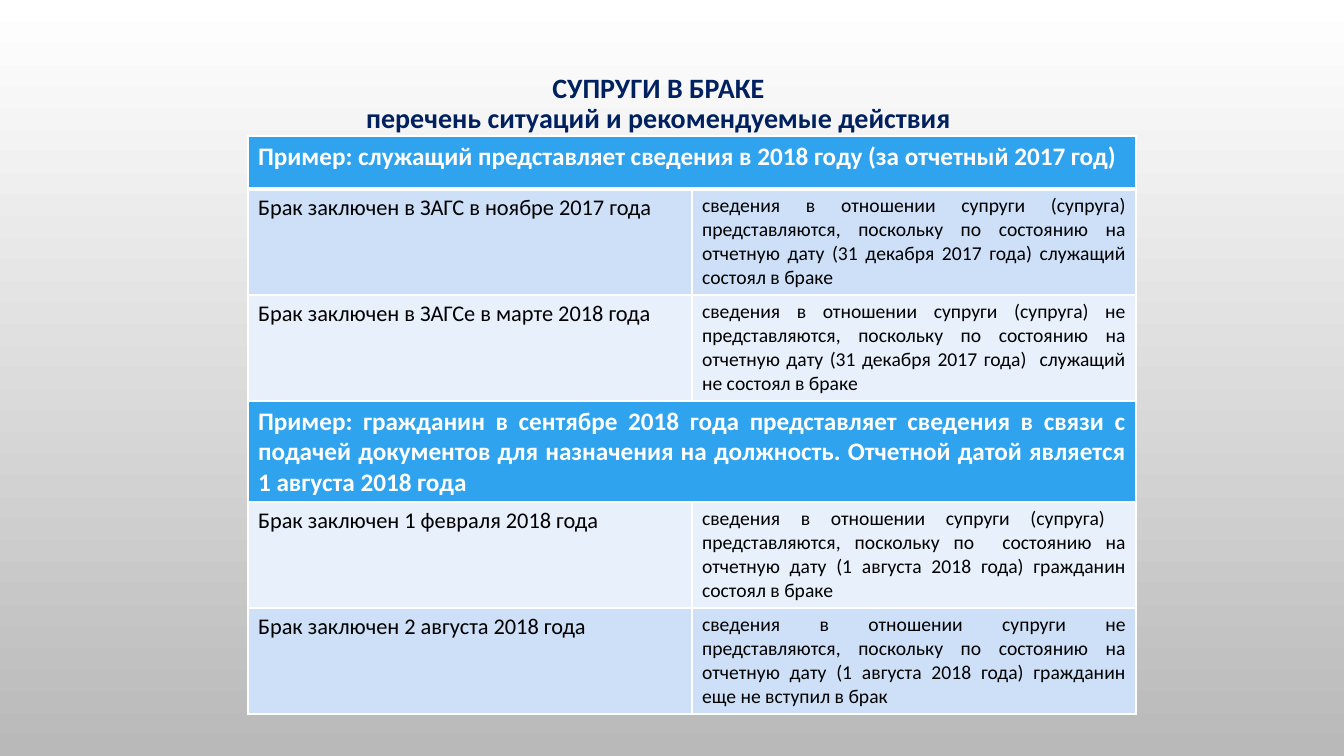
from pptx import Presentation
from pptx.dml.color import RGBColor
from pptx.enum.text import PP_ALIGN as Align
from pptx.oxml import parse_xml
from pptx.oxml.ns import nsdecls
from pptx.util import Pt

PX = 914400 / 100.8
NAVY = RGBColor(0x00, 0x20, 0x60)
WHITE = RGBColor(0xFF, 0xFF, 0xFF)
BLACK = RGBColor(0x00, 0x00, 0x00)
GREY = RGBColor(0xB9, 0xB9, 0xB9)
BLUE = RGBColor(0x2F, 0xA3, 0xEE)
LIGHT = RGBColor(0xCD, 0xE0, 0xF8)
PALE = RGBColor(0xE8, 0xF0, 0xFC)

TITLE = ["СУПРУГИ В БРАКЕ", "перечень ситуаций и рекомендуемые действия"]
TITLE_BOX = (101, 69, 1115, 66)
TABLE_LEFT, TABLE_TOP, COLUMN_WIDTH = 248, 136, 444

# Height, fill and texts; a row with a single text is a heading across both columns.
ROWS = [
    (53, BLUE, ["Пример: служащий представляет сведения в 2018 году (за отчетный 2017 год)"]),
    (106, LIGHT, [
        "Брак заключен в ЗАГС в ноябре 2017 года",
        "сведения в отношении супруги (супруга) представляются, поскольку по состоянию на "
        "отчетную дату (31 декабря 2017 года) служащий состоял в браке"]),
    (106, PALE, [
        "Брак заключен в ЗАГСе в марте 2018 года",
        "сведения в отношении супруги (супруга) не представляются, поскольку по состоянию на "
        "отчетную дату (31 декабря 2017 года)  служащий не состоял в браке"]),
    (101, BLUE, [
        "Пример: гражданин в сентябре 2018 года представляет сведения в связи с подачей "
        "документов для назначения на должность. Отчетной датой является 1 августа 2018 года"]),
    (106, PALE, [
        "Брак заключен 1 февраля 2018 года",
        "сведения в отношении супруги (супруга)  представляются, поскольку по  состоянию на "
        "отчетную дату (1 августа 2018 года) гражданин состоял в браке"]),
    (106, LIGHT, [
        "Брак заключен 2 августа 2018 года",
        "сведения в отношении супруги не представляются, поскольку по состоянию на "
        "отчетную дату (1 августа 2018 года) гражданин еще не вступил в брак"]),
]


def px(*lengths):
    return [round(n * PX) for n in lengths]


def add_text(p, text, size, color, bold, align):
    p.alignment = align
    r = p.add_run()
    r.text = text
    r.font.name = "Calibri"
    r.font.size = Pt(size)
    r.font.bold = bold
    r.font.color.rgb = color


def set_borders(cell, top, bottom):
    """Draw white borders; top and bottom are widths in points."""
    for side, width in (("L", 1), ("R", 1), ("T", top), ("B", bottom)):
        cell._tc.get_or_add_tcPr().append(parse_xml(
            f'<a:ln{side} {nsdecls("a")} w="{Pt(width)}"><a:solidFill>'
            f'<a:srgbClr val="{WHITE}"/></a:solidFill></a:ln{side}>'))


def set_background(s):
    fill = s.background.fill
    fill.gradient()
    fill.gradient_angle = 270
    for stop, position, color in zip(fill.gradient_stops, (0, 1), (WHITE, GREY)):
        stop.position = position
        stop.color.rgb = color


def add_title(s):
    tf = s.shapes.add_textbox(*px(*TITLE_BOX)).text_frame
    tf.word_wrap = True
    for i, line in enumerate(TITLE):
        p = tf.add_paragraph() if i else tf.paragraphs[0]
        p.line_spacing = 0.9
        add_text(p, line, 20, NAVY, True, Align.CENTER)


def add_situations(s):
    heights = [height for height, _, _ in ROWS]
    table = s.shapes.add_table(len(ROWS), 2, *px(
        TABLE_LEFT, TABLE_TOP, 2 * COLUMN_WIDTH, sum(heights))).table
    for column in table.columns:
        column.width = px(COLUMN_WIDTH)[0]
    for i, (height, color, texts) in enumerate(ROWS):
        table.rows[i].height = px(height)[0]
        cells = [table.cell(i, j) for j in range(2)]
        for cell in cells:
            set_borders(cell, 3 if i == 1 else 1, 3 if i == 0 else 1)
            cell.fill.solid()
            cell.fill.fore_color.rgb = color
        if len(texts) == 1:
            cells[0].merge(cells[1])
            styles = [(18, WHITE, True, Align.JUSTIFY if i else Align.LEFT)]
        else:
            styles = [(16, BLACK, False, Align.LEFT), (14, BLACK, False, Align.JUSTIFY)]
        for cell, text, style in zip(cells, texts, styles):
            add_text(cell.text_frame.paragraphs[0], text, *style)


def main():
    prs = Presentation()
    prs.slide_width, prs.slide_height = px(1344, 756)
    s = prs.slides.add_slide(prs.slide_layouts[6])
    set_background(s)
    add_title(s)
    add_situations(s)
    prs.save("out.pptx")


if __name__ == "__main__":
    main()
